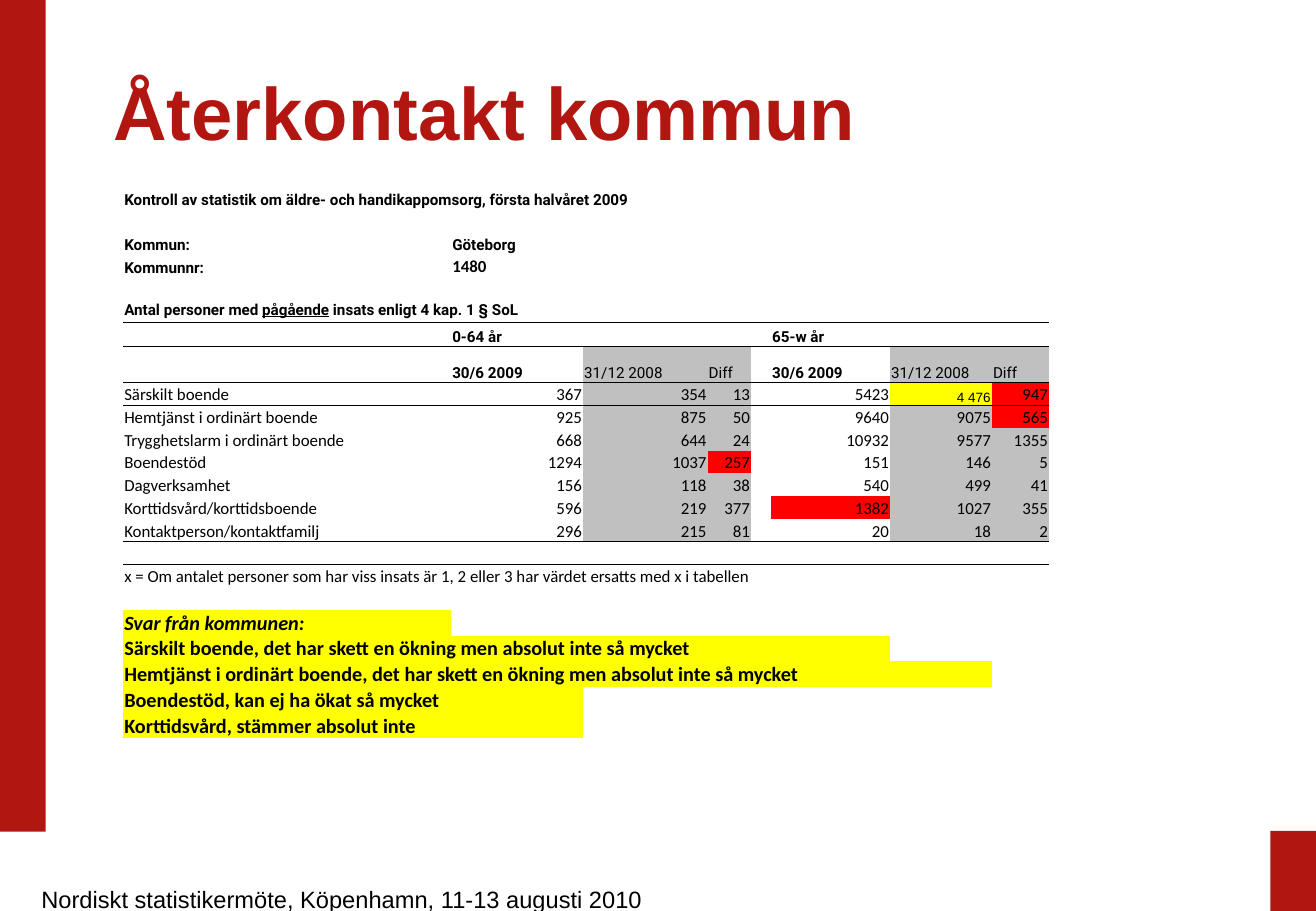
import lxml.etree
import pptx
import pptx.dml.color
import pptx.enum.shapes
import pptx.enum.text
import pptx.oxml.ns
import pptx.util

Pt = pptx.util.Pt
RGBColor = pptx.dml.color.RGBColor
ALIGN = pptx.enum.text.PP_ALIGN
ANCHOR = pptx.enum.text.MSO_ANCHOR
qn = pptx.oxml.ns.qn

BRAND_RED = RGBColor(0xB2, 0x16, 0x11)
BLACK = RGBColor(0x00, 0x00, 0x00)
GREY = RGBColor(0xC0, 0xC0, 0xC0)
YELLOW = RGBColor(0xFF, 0xFF, 0x00)
RED = RGBColor(0xFF, 0x00, 0x00)

TITLE = {"name": "Arial", "size": Pt(44), "bold": True}
FOOTER = {"name": "Arial", "size": Pt(14)}
HEADING = {"name": "Roboto", "size": Pt(9), "bold": True}
UNDERLINED = {**HEADING, "underline": True}
SUBHEADING = {"name": "Roboto", "size": Pt(9)}
BODY = {"name": "Calibri", "size": Pt(10)}
BODY_BOLD = {**BODY, "bold": True}
CORRECTED = {"name": "Arial", "size": Pt(8)}
ANSWER = {"name": "Calibri", "size": Pt(12), "bold": True}
ANSWER_TITLE = {**ANSWER, "italic": True}

NO_STYLE_NO_GRID = "{2D5ABB26-0587-4C30-8999-92F81FD0307C}"
COLUMN_WIDTHS = [194.4, 78.2, 73.8, 25.8, 11.9, 70.5, 60.4, 33.8, 61.2]
ROW_COUNT = 23
ROW_HEIGHT = 13.5
ANSWER_ROW_HEIGHT = 15.25
CAPTION_ROW, GROUP_ROW, HEADER_ROW, FIRST_DATA_ROW = 5, 6, 7, 8
NOTE_ROW, ANSWER_ROW = 16, 18
VALUE_COLUMNS = [1, 2, 3, 5, 6, 7]
GREY_COLUMNS = [2, 3, 6, 7]

DATA = [
    ("Särskilt boende", "367", "354", "13", "5423", "4 476", "947"),
    ("Hemtjänst i ordinärt boende", "925", "875", "50", "9640", "9075", "565"),
    ("Trygghetslarm i ordinärt boende", "668", "644", "24", "10932", "9577", "1355"),
    ("Boendestöd", "1294", "1037", "257", "151", "146", "5"),
    ("Dagverksamhet", "156", "118", "38", "540", "499", "41"),
    ("Korttidsvård/korttidsboende", "596", "219", "377", "1382", "1027", "355"),
    ("Kontaktperson/kontaktfamilj", "296", "215", "81", "20", "18", "2"),
]
LAST_DATA_ROW = FIRST_DATA_ROW + len(DATA) - 1
# Each answer with the number of columns it spans
ANSWERS = [
    ("Svar från kommunen:", 1),
    ("Särskilt boende, det har skett en ökning men absolut inte så mycket", 6),
    ("Hemtjänst i ordinärt boende, det har skett en ökning men absolut inte så mycket", 7),
    ("Boendestöd, kan ej ha ökat så mycket", 2),
    ("Korttidsvård, stämmer absolut inte", 2),
]
HIGHLIGHTS = {(8, 6): YELLOW, (8, 7): RED, (9, 7): RED, (11, 3): RED, (13, 5): RED}
# Row above each rule, with the first and last column of the rule
RULES = [(CAPTION_ROW, 0, 7), (GROUP_ROW, 1, 7), (HEADER_ROW, 0, 7), (LAST_DATA_ROW, 0, 7)]


def add_run(paragraph, text, formats, color=BLACK):
    run = paragraph.add_run()
    run.text = text
    for attribute, value in formats.items():
        setattr(run.font, attribute, value)
    run.font.color.rgb = color


def add_border(cell, tag, position):
    """Draw one thin black cell border; borders must precede the fill."""
    border = lxml.etree.Element(qn(tag), w=str(Pt(0.5)))
    fill = lxml.etree.SubElement(border, qn("a:solidFill"))
    lxml.etree.SubElement(fill, qn("a:srgbClr"), val=str(BLACK))
    cell._tc.get_or_add_tcPr().insert(position, border)


presentation = pptx.Presentation()
presentation.slide_width = Pt(780)
presentation.slide_height = Pt(540)
slide = presentation.slides.add_slide(presentation.slide_layouts[6])

for left, top, width, height in [(0, 0, 27, 493), (753, 492.5, 27, 47.5)]:
    bar = slide.shapes.add_shape(
        pptx.enum.shapes.MSO_SHAPE.RECTANGLE, Pt(left), Pt(top), Pt(width), Pt(height))
    bar.shadow.inherit = False
    bar.fill.solid()
    bar.fill.fore_color.rgb = BRAND_RED
    bar.line.fill.background()

for text, formats, color, anchor, align, box in [
    ("Nordiskt statistikermöte, Köpenhamn, 11-13 augusti 2010", FOOTER, BLACK,
     ANCHOR.TOP, ALIGN.RIGHT, (0, 521, 388, 19)),
    ("Återkontakt kommun", TITLE, BRAND_RED,
     ANCHOR.MIDDLE, ALIGN.LEFT, (60, 24, 663, 90)),
]:
    text_box = slide.shapes.add_textbox(*map(Pt, box))
    text_box.text_frame.word_wrap = True
    text_box.text_frame.vertical_anchor = anchor
    paragraph = text_box.text_frame.paragraphs[0]
    paragraph.alignment = align
    paragraph.line_spacing = 0.9 if formats is TITLE else 1.0
    add_run(paragraph, text, formats, color)

# Cell contents: (row, column) -> list of (text, formats)
contents = {
    (0, 0): [("Kontroll av statistik om äldre- och handikappomsorg, första halvåret 2009", HEADING)],
    (2, 0): [("Kommun:", HEADING)],
    (2, 1): [("Göteborg", HEADING)],
    (3, 0): [("Kommunnr:", HEADING)],
    (3, 1): [("1480", BODY_BOLD)],
    (CAPTION_ROW, 0): [("Antal personer med ", HEADING), ("pågående", UNDERLINED),
                       (" insats enligt 4 kap. 1 § SoL", HEADING)],
    (GROUP_ROW, 1): [("0-64 år", HEADING)],
    (GROUP_ROW, 5): [("65-w år", HEADING)],
    (NOTE_ROW, 0): [("x = Om antalet personer som har viss insats är 1, 2 eller 3 "
                     "har värdet ersatts med x i tabellen", BODY)],
}
spans = {(0, 0): 7, (CAPTION_ROW, 0): 6, (GROUP_ROW, 1): 3, (GROUP_ROW, 5): 3, (NOTE_ROW, 0): 8}
fills = {(row, column): GREY
         for row in range(HEADER_ROW, LAST_DATA_ROW + 1) for column in GREY_COLUMNS}
fills.update(HIGHLIGHTS)

for column, text in zip(VALUE_COLUMNS, ["30/6 2009", "31/12 2008", "Diff"] * 2):
    contents[HEADER_ROW, column] = [(text, SUBHEADING if column in GREY_COLUMNS else HEADING)]
for row, values in enumerate(DATA, FIRST_DATA_ROW):
    for column, text in zip([0] + VALUE_COLUMNS, values):
        contents[row, column] = [(text, CORRECTED if (row, column) == (8, 6) else BODY)]
for row, (text, span) in enumerate(ANSWERS, ANSWER_ROW):
    contents[row, 0] = [(text, ANSWER_TITLE if row == ANSWER_ROW else ANSWER)]
    spans[row, 0] = span
    fills.update({(row, column): YELLOW for column in range(span)})

table_frame = slide.shapes.add_table(
    ROW_COUNT, len(COLUMN_WIDTHS), Pt(73), Pt(110.2), Pt(sum(COLUMN_WIDTHS)), Pt(327))
table = table_frame.table
table.first_row = table.horz_banding = False
next(table_frame._element.iter(qn("a:tableStyleId"))).text = NO_STYLE_NO_GRID
for column, width in zip(table.columns, COLUMN_WIDTHS):
    column.width = Pt(width)
special_heights = {GROUP_ROW: 14, HEADER_ROW: 21.5}
for index, row in enumerate(table.rows):
    default_height = ANSWER_ROW_HEIGHT if index >= ANSWER_ROW else ROW_HEIGHT
    row.height = Pt(special_heights.get(index, default_height))

for row in range(ROW_COUNT):
    for column in range(len(COLUMN_WIDTHS)):
        cell = table.cell(row, column)
        cell.margin_left = cell.margin_right = cell.margin_top = Pt(0.7)
        cell.margin_bottom = 0
        cell.vertical_anchor = ANCHOR.TOP if row == CAPTION_ROW else ANCHOR.BOTTOM
        if (row, column) in fills:
            cell.fill.solid()
            cell.fill.fore_color.rgb = fills[row, column]
        else:
            cell.fill.background()
        paragraph = cell.text_frame.paragraphs[0]
        if column > 0 and FIRST_DATA_ROW <= row <= LAST_DATA_ROW:
            paragraph.alignment = ALIGN.RIGHT
        for text, formats in contents.get((row, column), []):
            add_run(paragraph, text, formats)
        if (row, column) not in contents:
            lxml.etree.SubElement(paragraph._p, qn("a:endParaRPr"), sz="800")

for row, first, last in RULES:
    for column in range(first, last + 1):
        lower_cell = table.cell(row + 1, column)
        add_border(lower_cell, "a:lnT", 0)
        upper_cell = table.cell(row, column)
        has_top = upper_cell._tc.tcPr.find(qn("a:lnT")) is not None
        add_border(upper_cell, "a:lnB", 1 if has_top else 0)

for (row, column), span in spans.items():
    if span > 1:
        table.cell(row, column).merge(table.cell(row, column + span - 1))

presentation.save("out.pptx")
